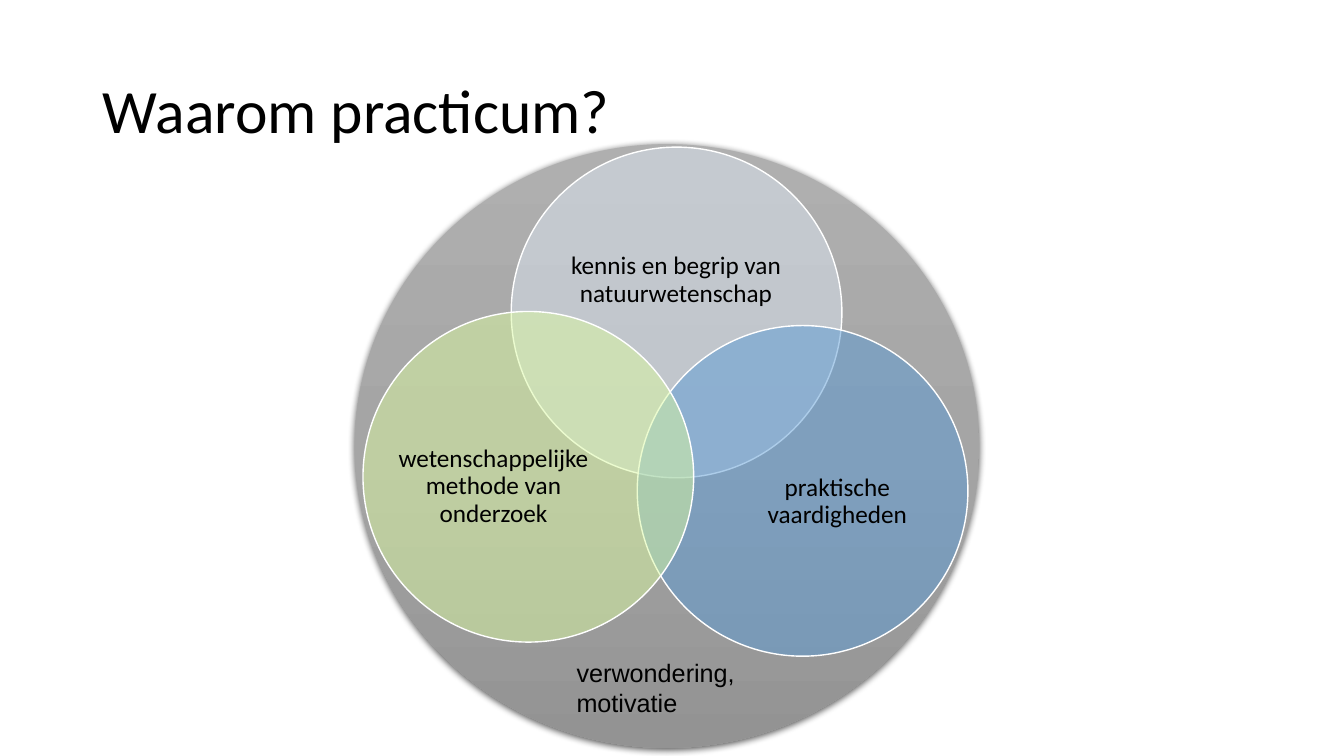
from lxml.etree import SubElement
from pptx import Presentation
from pptx.dml.color import RGBColor
from pptx.enum.shapes import MSO_SHAPE
from pptx.enum.text import MSO_ANCHOR, PP_ALIGN
from pptx.oxml import parse_xml
from pptx.oxml.ns import nsdecls, qn
from pptx.util import Inches, Pt

COLORS = {
    "text": "000000",
    "outline": "FFFFFF",
    "shadow": "000000",
    "knowledge": "DBE5F1",
    "skills": "5B9BD5",
    "method": "D9F8A0",
}
BACKDROP_STOPS = [(0, "AFAFAF"), (50, "A5A5A5"), (100, "939393")]
CIRCLE_SIZE = 3.28


def rgb(name):
    return RGBColor.from_string(COLORS[name])


class VennSlide:
    """Holds the style and the current slide."""

    def __init__(self, deck):
        self.page = deck.slides.add_slide(deck.slide_layouts[5])
        self.font = "Calibri"

    def style(self, paragraph, size, font=None):
        paragraph.font.name = font or self.font
        paragraph.font.size = Pt(size)
        paragraph.font.color.rgb = rgb("text")

    def title(self, text, area):
        box = self.page.shapes.title
        box.left, box.top, box.width, box.height = map(Inches, area)
        frame = box.text_frame
        frame.text = text
        frame.vertical_anchor = MSO_ANCHOR.MIDDLE
        paragraph = frame.paragraphs[0]
        paragraph.alignment = PP_ALIGN.LEFT
        paragraph.line_spacing = 0.9
        self.style(paragraph, 44)

    def backdrop(self, area):
        oval = self.page.shapes.add_shape(MSO_SHAPE.OVAL, *map(Inches, area))
        oval.line.fill.background()
        # Three-stop gradient, running downwards
        oval.fill.gradient()
        properties = oval._element.spPr
        gradient = properties.find(qn("a:gradFill"))
        stops = "".join(
            f'<a:gs pos="{place * 1000}"><a:srgbClr val="{color}"/></a:gs>'
            for place, color in BACKDROP_STOPS)
        properties.replace(gradient, parse_xml(
            f'<a:gradFill {nsdecls("a")} rotWithShape="1"><a:gsLst>{stops}</a:gsLst>'
            '<a:lin ang="5400000" scaled="0"/></a:gradFill>'))
        # Soft shadow below
        oval.shadow.inherit = False
        effects = properties.find(qn("a:effectLst"))
        shadow = SubElement(
            effects, qn("a:outerShdw"), blurRad=str(Pt(4.5)), dist=str(Pt(1.5)),
            dir="5400000", algn="ctr", rotWithShape="0")
        color = SubElement(shadow, qn("a:srgbClr"), val=COLORS["shadow"])
        SubElement(color, qn("a:alpha"), val="63000")

    def circle(self, group, left, top, color):
        oval = group.shapes.add_shape(
            MSO_SHAPE.OVAL, Inches(left), Inches(top),
            Inches(CIRCLE_SIZE), Inches(CIRCLE_SIZE))
        oval.shadow.inherit = False
        oval.fill.solid()
        oval.fill.fore_color.rgb = rgb(color)
        tint = oval._element.spPr.find(qn("a:solidFill")).find(qn("a:srgbClr"))
        SubElement(tint, qn("a:alpha"), val="50000")
        oval.line.color.rgb = rgb("outline")
        oval.line.width = Pt(1)

    def label(self, group, text, area):
        frame = group.shapes.add_textbox(*map(Inches, area)).text_frame
        frame.word_wrap = True
        frame.vertical_anchor = MSO_ANCHOR.MIDDLE
        frame.margin_left = frame.margin_right = 0
        frame.margin_top = frame.margin_bottom = 0
        frame.text = text
        paragraph = frame.paragraphs[0]
        paragraph.alignment = PP_ALIGN.CENTER
        paragraph.line_spacing = 0.9
        paragraph.space_after = Pt(6.3)
        self.style(paragraph, 18)

    def caption(self, text, area):
        frame = self.page.shapes.add_textbox(*map(Inches, area)).text_frame
        frame.word_wrap = True
        frame.text = text
        self.style(frame.paragraphs[0], 18, "Arial")


def main():
    deck = Presentation()
    deck.slide_width, deck.slide_height = Inches(13.33), Inches(7.5)
    venn = VennSlide(deck)

    # Title and surrounding circle
    venn.title("Waarom practicum?", (0.92, 0.4, 11.5, 1.45))
    venn.backdrop((3.52, 1.43, 6.19, 5.99))

    # Overlapping circles, each with its label
    circles = [
        (5.07, 1.46, "knowledge", "kennis en begrip van natuurwetenschap",
         (5.5, 2.04, 2.41, 1.48)),
        (6.32, 3.23, "skills", "praktische vaardigheden",
         (7.32, 4.08, 1.97, 1.8)),
        (3.6, 3.09, "method", "wetenschappelijke methode van onderzoek",
         (3.91, 3.93, 1.97, 1.8)),
    ]
    group = venn.page.shapes.add_group_shape()
    for left, top, color, text, area in circles:
        venn.circle(group, left, top, color)
        venn.label(group, text, area)

    # Caption at the foot of the surrounding circle
    venn.caption("verwondering, motivatie", (5.62, 6.47, 1.97, 0.71))
    deck.save("out.pptx")


if __name__ == "__main__":
    main()
